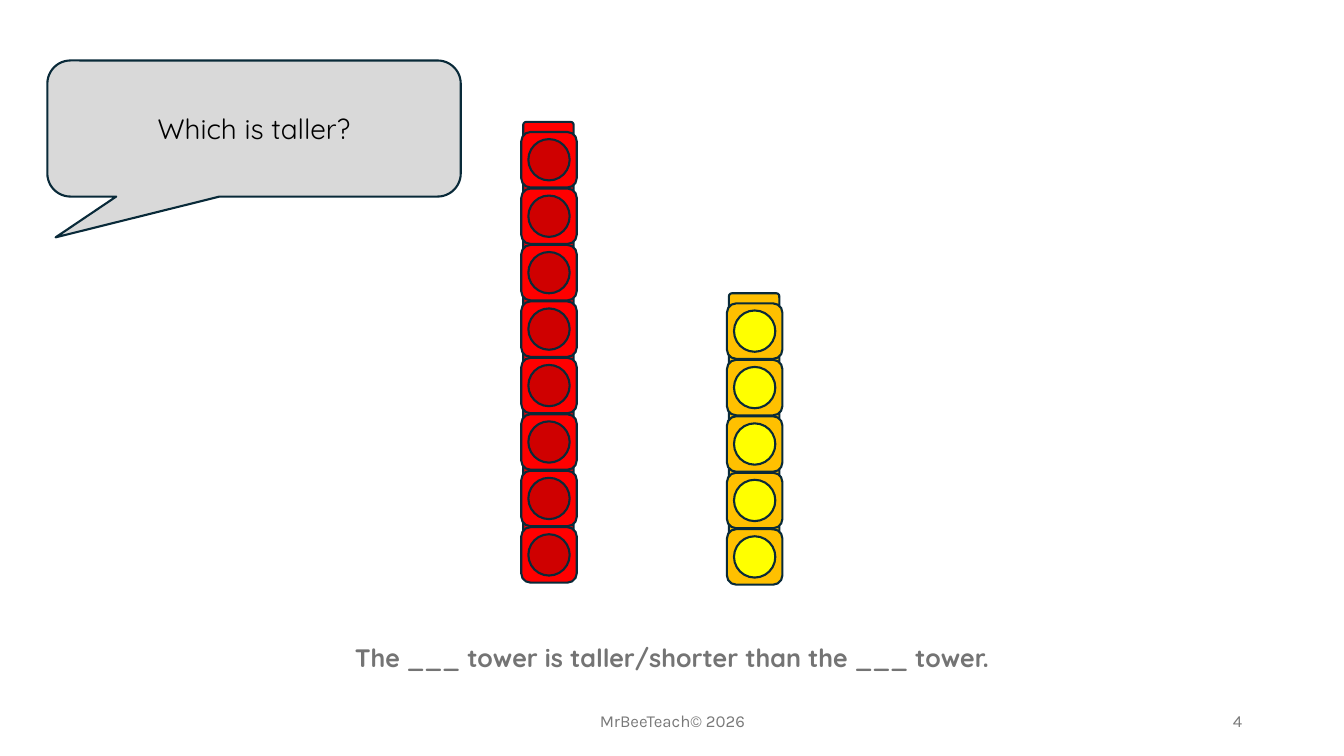
from dataclasses import dataclass
from typing import Any

from lxml import etree
from pptx import Presentation
from pptx import util as u
from pptx.dml import color as c
from pptx.enum import shapes as s
from pptx.enum import text as t
from pptx.oxml import ns

OUTLINE = "092A39"
CUBE_PITCH = 0.56


@dataclass(frozen=True)
class Tower:
    left: float
    bottom_cube_top: float
    cubes: int
    body: str
    face: str
    face_opacity: int = 100


@dataclass(frozen=True)
class Label:
    box: tuple[float, float, float, float]
    wording: str
    font: str
    size: int
    color: str
    align: t.PP_ALIGN = t.PP_ALIGN.CENTER
    anchor: t.MSO_ANCHOR = t.MSO_ANCHOR.MIDDLE
    bold: bool = False


TOWERS = [
    Tower(5.17, 5.13, 8, "FF0000", "CC0000", 93),
    Tower(7.21, 5.15, 5, "FFC000", "FFFF00"),
]
LABELS = [
    Label((4.42, 6.95, 4.5, 0.4), "MrBeeTeach© 2026", "Karla", 12, "797979"),
    Label((9.42, 6.95, 3, 0.4), "4", "Karla", 12, "797979", t.PP_ALIGN.RIGHT),
    Label((3.33, 6.32, 6.67, 0.4), "The ___ tower is taller/shorter than the ___ tower.",
          "Quicksand", 18, "747474", anchor=t.MSO_ANCHOR.TOP, bold=True),
]
QUESTION = Label((0.47, 0.6, 4.1, 1.35), "Which is taller?", "Quicksand", 20, "000000")


def rgb(value: str) -> c.RGBColor:
    return c.RGBColor.from_string(value)


def write_label(shape: Any, label: Label) -> None:
    frame = shape.text_frame
    frame.word_wrap = True
    frame.vertical_anchor = label.anchor
    paragraph = frame.paragraphs[0]
    paragraph.alignment = label.align
    run = paragraph.add_run()
    run.text = label.wording
    run.font.name = label.font
    run.font.size = u.Pt(label.size)
    run.font.bold = label.bold
    run.font.color.rgb = rgb(label.color)


def add_outlined(parent: Any, kind: s.MSO_SHAPE, left: float, top: float,
                 width: float, height: float, fill: str, opacity: int = 100) -> Any:
    shape = parent.add_shape(kind, u.Inches(left), u.Inches(top),
                             u.Inches(width), u.Inches(height))
    shape.shadow.inherit = False
    shape.fill.solid()
    shape.fill.fore_color.rgb = rgb(fill)
    shape.line.color.rgb = rgb(OUTLINE)
    shape.line.width = u.Pt(1.5)
    if opacity < 100:
        fill_color = shape.element.spPr.find(ns.qn("a:solidFill"))[0]
        etree.SubElement(fill_color, ns.qn("a:alpha")).set("val", str(opacity * 1000))
    return shape


def add_tower(slide: Any, tower: Tower) -> None:
    for level in range(tower.cubes):
        top = tower.bottom_cube_top - level * CUBE_PITCH
        cube = slide.shapes.add_group_shape().shapes
        add_outlined(cube, s.MSO_SHAPE.ROUNDED_RECTANGLE,
                     tower.left + 0.02, top, 0.5, 0.17, tower.body)
        add_outlined(cube, s.MSO_SHAPE.ROUNDED_RECTANGLE,
                     tower.left, top + 0.1, 0.55, 0.55, tower.body)
        add_outlined(cube, s.MSO_SHAPE.OVAL, tower.left + 0.07, top + 0.17,
                     0.41, 0.41, tower.face, tower.face_opacity)


def add_question(slide: Any) -> None:
    bubble = add_outlined(slide.shapes, s.MSO_SHAPE.ROUNDED_RECTANGULAR_CALLOUT,
                          *QUESTION.box, "D9D9D9")
    for index, value in enumerate((-0.48, 0.8, 0.17)):
        bubble.adjustments[index] = value
    write_label(bubble, QUESTION)


def main() -> None:
    presentation = Presentation()
    presentation.slide_width = u.Inches(13.33)
    presentation.slide_height = u.Inches(7.5)
    slide = presentation.slides.add_slide(presentation.slide_layouts[6])
    for label in LABELS:
        text_box = slide.shapes.add_textbox(*(u.Inches(length) for length in label.box))
        write_label(text_box, label)
    add_question(slide)
    for tower in TOWERS:
        add_tower(slide, tower)
    presentation.save("out.pptx")


if __name__ == "__main__":
    main()
